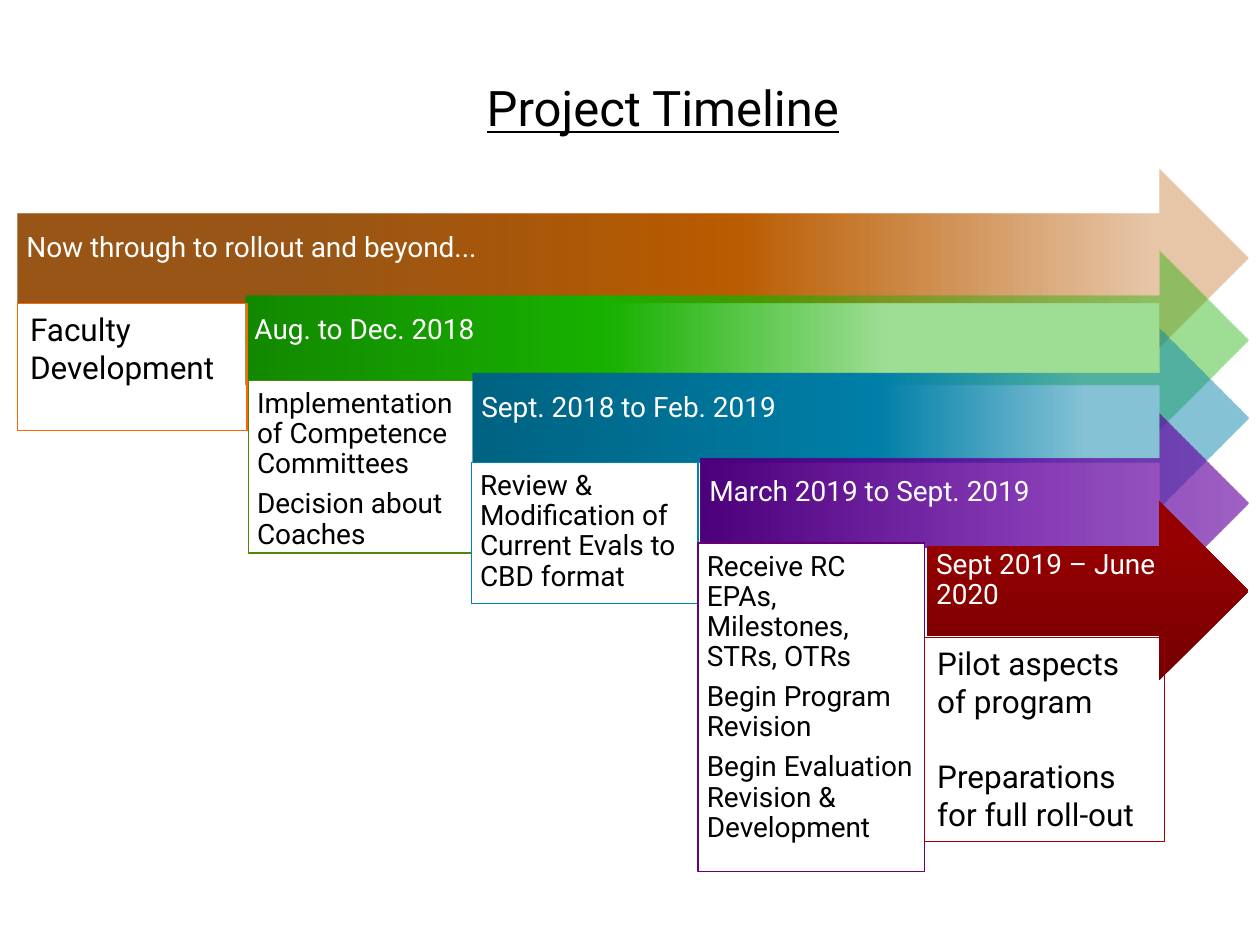
from lxml.etree import SubElement
from pptx import Presentation
from pptx.dml.color import RGBColor
from pptx.enum.shapes import MSO_SHAPE
from pptx.enum.text import MSO_ANCHOR, PP_ALIGN
from pptx.oxml.ns import qn
from pptx.util import Inches, Pt

FONT = "Roboto"
WHITE = RGBColor(0xFF, 0xFF, 0xFF)
BLACK = RGBColor(0x00, 0x00, 0x00)
ORANGE = RGBColor(0xFF, 0x66, 0x00)
OLIVE = RGBColor(0x50, 0x87, 0x09)
TEAL = RGBColor(0x00, 0x83, 0xAE)
PURPLE = RGBColor(0x66, 0x00, 0x75)
RED = RGBColor(0x9C, 0x00, 0x01)
BROWN_FADE = [(23, RGBColor(0x8F, 0x46, 0x00), 91),
              (58, RGBColor(0xBA, 0x5C, 0x00), 100),
              (92, RGBColor(0xB9, 0x5B, 0x00), 34)]
GREEN_FADE = [(0, RGBColor(0x12, 0x88, 0x00), 100),
              (36, RGBColor(0x18, 0xB1, 0x00), 100),
              (64, RGBColor(0x17, 0xB1, 0x00), 41)]
BLUE_FADE = [(0, RGBColor(0x00, 0x62, 0x81), 100),
             (52, RGBColor(0x00, 0x7F, 0xA8), 100),
             (79, RGBColor(0x00, 0x80, 0xA9), 47)]
PURPLE_FADE = [(0, RGBColor(0x4C, 0x00, 0x7B), 100),
               (62, RGBColor(0x63, 0x00, 0xA0), 76),
               (100, RGBColor(0x63, 0x00, 0xA0), 61)]
RED_FADE = [(0, RGBColor(0x74, 0x00, 0x01), 100),
            (80, RGBColor(0x97, 0x00, 0x01), 100),
            (100, RGBColor(0x98, 0x00, 0x01), 100)]

ARROW_TIP = 9.91
ARROW_HEIGHT = 1.42
ARROW_INSETS = (0.07, 0.07, 0.28, 0.23)
STEP_INSETS = (0.07, 0.07, 0.07, 0.07)
NOTE_INSETS = (0.1, 0.05, 0.1, 0.05)

PHASES = [
    (0.14, 1.34, BROWN_FADE, 0, "Now through to rollout and beyond...", None),
    (1.95, 1.99, GREEN_FADE, 0, "Aug. to Dec. 2018",
     (1.97, 3.02, 1.37, OLIVE, ["Implementation of Competence Committees",
                                "Decision about Coaches"])),
    (3.75, 2.61, BLUE_FADE, 0, "Sept. 2018 to Feb. 2019",
     (3.74, 3.67, 1.12, TEAL,
      ["Review & Modification of Current Evals to CBD format"])),
    (5.56, 3.28, PURPLE_FADE, 0, "March 2019 to Sept. 2019",
     (5.54, 4.31, 2.61, PURPLE, ["Receive RC EPAs, Milestones, STRs, OTRs",
                                 "Begin Program Revision",
                                 "Begin Evaluation Revision & Development"])),
    (7.36, 3.98, RED_FADE, 90, "Sept 2019 – June 2020", None),
]


def write_text(sp, lines, size, color, insets, anchor=MSO_ANCHOR.TOP,
               align=PP_ALIGN.LEFT, line_spacing=None, after=0, gap=0):
    tf = sp.text_frame
    tf.word_wrap = True
    tf.vertical_anchor = anchor
    tf.margin_left, tf.margin_top, tf.margin_right, tf.margin_bottom = map(Inches, insets)
    for i, line in enumerate(lines):
        p = tf.add_paragraph() if i else tf.paragraphs[0]
        p.text = line
        p.alignment = align
        p.line_spacing = line_spacing
        p.space_after = Pt(after)
        p.space_before = Pt(gap if i else 0)
        p.font.name = FONT
        p.font.size = Pt(size)
        p.font.color.rgb = color


def add_shape(s, kind, left, top, width, height):
    sp = s.shapes.add_shape(kind, Inches(left), Inches(top), Inches(width), Inches(height))
    sp.shadow.inherit = False
    return sp


def fill_gradient(sp, stops, angle):
    sp.fill.gradient()
    sp.fill.gradient_angle = angle
    stop_list = next(sp.element.iter(qn("a:gsLst")))
    stop_list.clear()
    for position, color, opacity in stops:
        stop = SubElement(stop_list, qn("a:gs"), pos=str(position * 1000))
        rgb = SubElement(stop, qn("a:srgbClr"), val=str(color))
        if opacity < 100:
            SubElement(rgb, qn("a:alpha"), val=str(opacity * 1000))


def add_arrow(s, left, top, stops, angle, label):
    sp = add_shape(s, MSO_SHAPE.RIGHT_ARROW, left, top, ARROW_TIP - left, ARROW_HEIGHT)
    fill_gradient(sp, stops, angle)
    sp.line.fill.background()
    write_text(sp, [label], 16, WHITE, ARROW_INSETS, MSO_ANCHOR.MIDDLE, line_spacing=0.9)


def add_box(s, left, top, width, height, color):
    sp = add_shape(s, MSO_SHAPE.RECTANGLE, left, top, width, height)
    sp.line.color.rgb = color
    sp.line.width = Pt(0.75)
    return sp


def add_steps(s, left, top, height, color, steps):
    sp = add_box(s, left, top, 1.8, height, color)
    sp.fill.solid()
    sp.fill.fore_color.rgb = WHITE
    write_text(sp, steps, 16, BLACK, STEP_INSETS, line_spacing=0.9, after=5.6)


def add_note(s, left, top, width, height, color, lines):
    sp = add_box(s, left, top, width, height, color)
    sp.fill.background()
    write_text(sp, lines, 18, BLACK, NOTE_INSETS, gap=21.5)


def add_title(s, text):
    sp = s.shapes.add_textbox(Inches(3.44), Inches(0.57), Inches(3.64), Inches(0.57))
    write_text(sp, [text], 28, BLACK, NOTE_INSETS, align=PP_ALIGN.CENTER)
    sp.text_frame.paragraphs[0].font.underline = True


def main():
    prs = Presentation()
    prs.slide_width, prs.slide_height = Inches(10), Inches(7.5)
    s = prs.slides.add_slide(prs.slide_layouts[6])
    for left, top, stops, angle, label, steps in PHASES:
        add_arrow(s, left, top, stops, angle, label)
        if steps:
            add_steps(s, *steps)
    add_note(s, 0.14, 2.41, 1.82, 1.01, ORANGE, ["Faculty Development"])
    add_note(s, 7.34, 5.06, 1.9, 1.62, RED,
             ["Pilot aspects of program", "Preparations for full roll-out"])
    add_title(s, "Project Timeline")
    prs.save("out.pptx")


if __name__ == "__main__":
    main()
